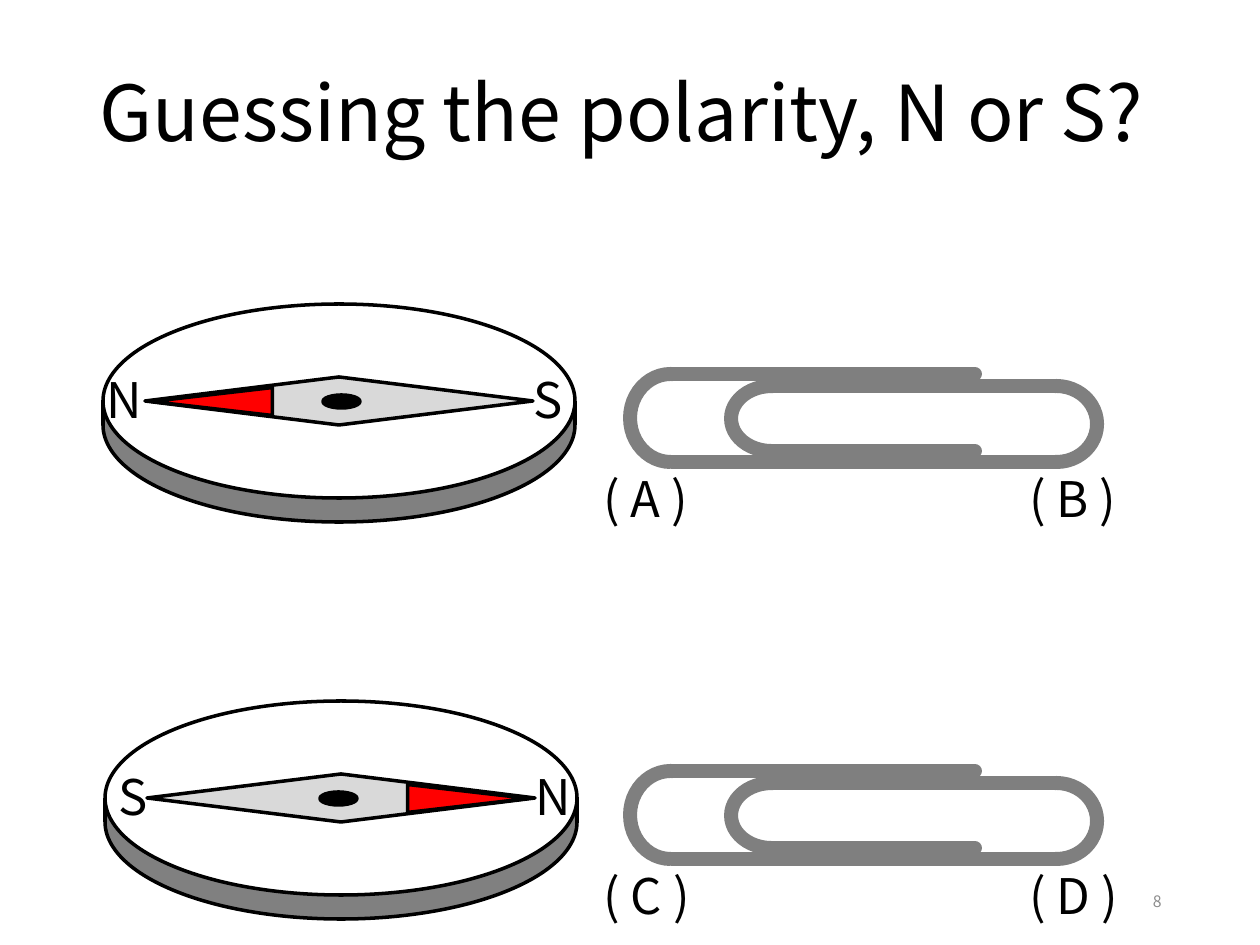
from lxml.etree import SubElement
from pptx import Presentation
from pptx.dml.color import RGBColor
from pptx.enum.shapes import MSO_CONNECTOR as Connector, MSO_SHAPE as Shape
from pptx.enum.text import MSO_ANCHOR as Anchor, MSO_AUTO_SIZE as AutoSize, PP_ALIGN as Align
from pptx.oxml.ns import qn
from pptx.util import Emu, Pt

FONT = "Noto Sans CJK KR"
BLACK, WHITE, RED = "000000", "FFFFFF", "FF0000"
RIM_GRAY, NEEDLE_GRAY, WIRE_GRAY, NUMBER_GRAY = "808080", "D9D9D9", "7F7F7F", "8C8C8C"
OUTLINE, WIRE = 2, 8
DIAL_WIDTH, DIAL_HEIGHT, DIAL_DEPTH = 472, 194, 24


def px(length):
    return Emu(round(length * 914400 / 126))


def color(value):
    return RGBColor.from_string(value)


class PolarityPage:
    def __init__(self, deck):
        self.page = deck.slides.add_slide(deck.slide_layouts[5])
        self.shapes = self.page.shapes

    def group(self):
        self.shapes = self.page.shapes.add_group_shape().shapes

    def ungroup(self):
        self.shapes = self.page.shapes

    def set_text(self, frame, text, size, ink=BLACK, align=Align.LEFT):
        para = frame.paragraphs[0]
        para.text = text
        para.alignment = align
        para.font.name = FONT
        para.font.size = Pt(size)
        para.font.color.rgb = color(ink)
        return para

    def title(self, text, left, top, width, height):
        box = self.page.shapes.title
        box.left, box.top, box.width, box.height = map(px, (left, top, width, height))
        frame = box.text_frame
        frame.auto_size = AutoSize.NONE
        frame.vertical_anchor = Anchor.MIDDLE
        self.set_text(frame, text, 44).line_spacing = 0.9

    def label(self, text, left, top, width):
        frame = self.shapes.add_textbox(*map(px, (left, top, width, 72))).text_frame
        frame.word_wrap = False
        frame.auto_size = AutoSize.SHAPE_TO_FIT_TEXT
        self.set_text(frame, text, 28)

    def page_number(self, text, left, top, width, height):
        frame = self.shapes.add_textbox(*map(px, (left, top, width, height))).text_frame
        frame.word_wrap = True
        frame.vertical_anchor = Anchor.MIDDLE
        self.set_text(frame, text, 9, NUMBER_GRAY, Align.RIGHT)

    def stroke(self, shape, ink, weight):
        shape.line.color.rgb = color(ink)
        shape.line.width = Pt(weight)

    def solid(self, kind, left, top, width, height, fill, rotation=0):
        shape = self.shapes.add_shape(kind, *map(px, (left, top, width, height)))
        shape.shadow.inherit = False
        shape.rotation = rotation
        shape.fill.solid()
        shape.fill.fore_color.rgb = color(fill)
        self.stroke(shape, BLACK, OUTLINE)

    def bend(self, left, top, width, height, start, end):
        arc = self.shapes.add_shape(Shape.ARC, *map(px, (left, top, width, height)))
        arc.shadow.inherit = False
        arc.rotation = 180
        arc.adjustments[0], arc.adjustments[1] = start, end
        arc.fill.background()
        self.stroke(arc, WIRE_GRAY, WIRE)

    def line(self, x1, y1, x2, y2, ink, weight, cap="flat"):
        line = self.shapes.add_connector(Connector.STRAIGHT, *map(px, (x1, y1, x2, y2)))
        self.stroke(line, ink, weight)
        properties = line.element.spPr
        properties.find(qn("a:ln")).set("cap", cap)
        SubElement(properties, qn("a:effectLst"))

    def compass(self, left, top, north_right):
        def place(offset, width):
            return left + (offset if north_right else DIAL_WIDTH - offset - width)

        turn = 90 if north_right else 270
        self.group()
        self.solid(Shape.OVAL, left, top + DIAL_DEPTH, DIAL_WIDTH, DIAL_HEIGHT, RIM_GRAY)
        self.solid(Shape.OVAL, left, top, DIAL_WIDTH, DIAL_HEIGHT, WHITE)
        self.solid(Shape.DIAMOND, place(212, 48), top - 97, 48, 388, NEEDLE_GRAY, turn)
        self.solid(Shape.ISOSCELES_TRIANGLE, place(349, 28), top + 37, 28, 121, RED, turn)
        self.solid(Shape.OVAL, place(215, 37), top + 91, 37, 13, BLACK)
        middle = top + DIAL_HEIGHT // 2
        for x in (left, left + DIAL_WIDTH):
            self.line(x, middle + DIAL_DEPTH, x, middle, BLACK, OUTLINE)
        self.label("N", place(418, 63), top + 59, 63)
        self.label("S", place(1, 53), top + 59, 53)
        self.ungroup()

    def paper_clip(self, left, top):
        self.group()
        self.bend(left + 101, top + 12, 81, 65, 162, 55.65)
        for start, end, y in ((142, 426, 12), (42, 426, 88), (142, 345, 77), (42, 345, 0)):
            self.line(left + start, top + y, left + end, top + y, WIRE_GRAY, WIRE, "rnd")
        self.bend(left + 386, top + 12, 81, 76, 52.42, 163.18)
        self.bend(left, top, 81, 88, 162, 55.65)
        self.ungroup()


def main():
    deck = Presentation()
    deck.slide_width, deck.slide_height = px(1260), px(945)
    page = PolarityPage(deck)
    page.title("Guessing the polarity, N or S?", 87, 0, 1086, 233)
    page.page_number("8", 890, 876, 284, 50)
    rows = ((103, 304, False, "( A )", "( B )"), (105, 701, True, "( C )", "( D )"))
    for left, top, north_right, near_end, far_end in rows:
        page.compass(left, top, north_right)
        page.paper_clip(630, top + 70)
        page.label(near_end, 591, top + 158, 123)
        page.label(far_end, 1017, top + 158, 123)
    deck.save("out.pptx")


if __name__ == "__main__":
    main()
